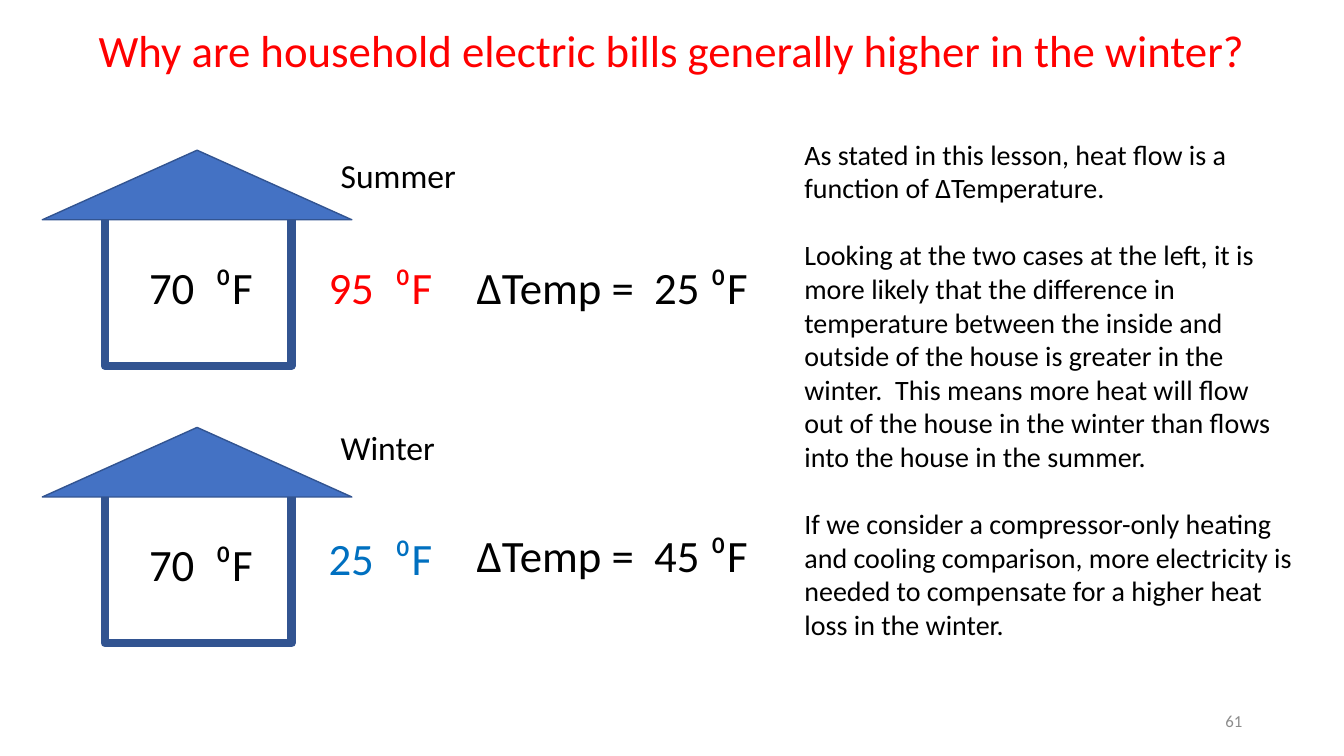
from pptx import Presentation
from pptx.dml.color import RGBColor
from pptx.enum import shapes, text
from pptx.util import Inches, Pt

COLORS = {
    "black": "000000",
    "red": "FF0000",
    "cold": "0070C0",
    "roof": "4472C4",
    "outline": "325491",
    "number": "8C8C8C",
}
ARTICLE = [
    "As stated in this lesson, heat flow is a function of ∆Temperature.",
    "Looking at the two cases at the left, it is more likely that the difference in "
    "temperature between the inside and outside of the house is greater in the winter.  "
    "This means more heat will flow out of the house in the winter than flows into the "
    "house in the summer.",
    "If we consider a compressor-only heating and cooling comparison, more electricity "
    "is needed to compensate for a higher heat loss in the winter.",
]


def color(name):
    return RGBColor.from_string(COLORS[name])


def add_text(container, box, paragraphs, size, color_name="black",
             align=text.PP_ALIGN.LEFT, anchor=text.MSO_ANCHOR.TOP, gap=0):
    shape = container.add_textbox(*map(Inches, box))
    frame = shape.text_frame
    frame.word_wrap = True
    frame.vertical_anchor = anchor
    frame.text = "\n".join(paragraphs)
    for index, paragraph in enumerate(frame.paragraphs):
        paragraph.alignment = align
        paragraph.space_before = Pt(gap if index else 0)
        for run in paragraph.runs:
            run.font.name = "Calibri"
            run.font.size = Pt(size)
            run.font.color.rgb = color(color_name)


def add_part(container, kind, box, line_width, fill=None):
    shape = container.add_shape(kind, *map(Inches, box))
    shape.shadow.inherit = False
    if fill:
        shape.fill.solid()
        shape.fill.fore_color.rgb = color(fill)
    else:
        shape.fill.background()
    shape.line.color.rgb = color("outline")
    shape.line.width = Pt(line_width)


def add_house(slide, top):
    house = slide.shapes.add_group_shape().shapes
    add_part(house, shapes.MSO_SHAPE.RECTANGLE, (1.04, top + 0.65, 1.85, 1.49), 6)
    add_part(house, shapes.MSO_SHAPE.ISOSCELES_TRIANGLE, (0.42, top, 3.07, 0.69), 1, "roof")
    add_text(house, (1.38, top + 1.04, 1.44, 0.64), ["70  ⁰F"], 32)


def add_season(slide, name, name_top, house_top, outside, outside_top, outside_color,
               difference, difference_top):
    add_house(slide, house_top)
    add_text(slide.shapes, (3.28, name_top, 1.71, 0.5), [name], 24)
    add_text(slide.shapes, (3.16, outside_top, 1.71, 0.64), [f"{outside}  ⁰F"], 32,
             outside_color)
    add_text(slide.shapes, (4.63, difference_top, 3.43, 0.64),
             [f"∆Temp =  {difference} ⁰F"], 32)


def main():
    presentation = Presentation()
    presentation.slide_width = Inches(13.33)
    presentation.slide_height = Inches(7.5)
    slide = presentation.slides.add_slide(presentation.slide_layouts[6])
    add_text(slide.shapes, (0.82, 0.18, 11.69, 0.64),
             ["Why are household electric bills generally higher in the winter?"],
             32, "red", text.PP_ALIGN.CENTER)
    add_season(slide, "Summer", 1.49, 1.49, 95, 2.53, "red", 25, 2.53)
    add_season(slide, "Winter", 4.19, 4.24, 25, 5.22, "cold", 45, 5.19)
    add_text(slide.shapes, (7.88, 1.31, 5.04, 5.15), ARTICLE, 20, gap=24)
    add_text(slide.shapes, (9.42, 6.95, 3, 0.4), ["61"], 12, "number",
             text.PP_ALIGN.RIGHT, text.MSO_ANCHOR.MIDDLE)
    presentation.save("out.pptx")


if __name__ == "__main__":
    main()
